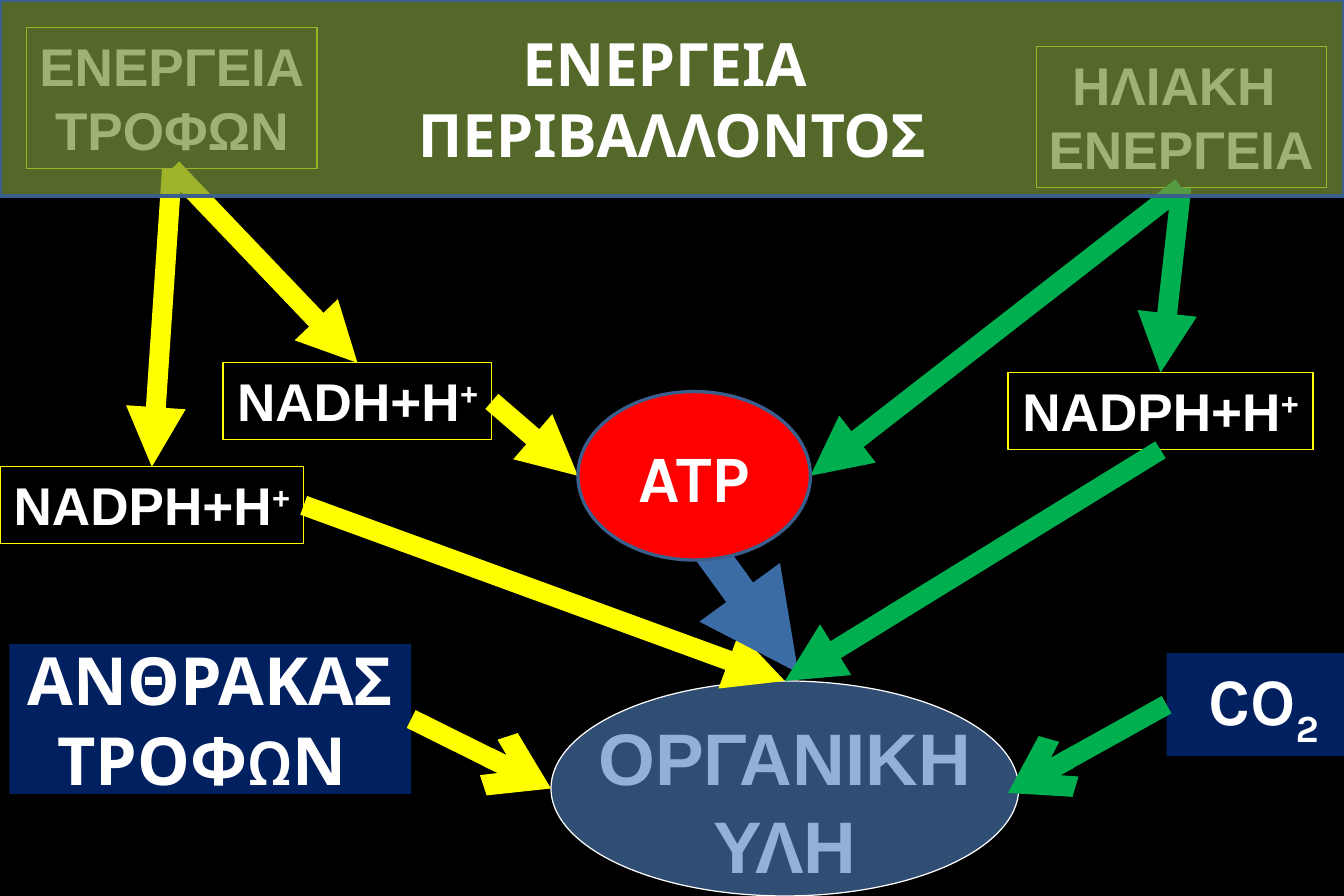
from lxml import etree
from pptx import Presentation
from pptx.dml.color import RGBColor
from pptx.enum.shapes import MSO_CONNECTOR, MSO_SHAPE
from pptx.enum.text import MSO_ANCHOR, MSO_AUTO_SIZE, PP_ALIGN
from pptx.oxml.ns import qn
from pptx.util import Inches, Pt

RECTANGLE, OVAL = MSO_SHAPE.RECTANGLE, MSO_SHAPE.OVAL
STRAIGHT = MSO_CONNECTOR.STRAIGHT
TOP, MIDDLE = MSO_ANCHOR.TOP, MSO_ANCHOR.MIDDLE
GROW = MSO_AUTO_SIZE.SHAPE_TO_FIT_TEXT
CENTER = PP_ALIGN.CENTER

COLORS = {
    "black": "000000", "white": "FFFFFF", "yellow": "FFFF00", "green": "00B050",
    "navy": "002060", "red": "FF0000", "blue": "4F81BD", "edge": "3A5F8C",
    "arrow": "3C6CA6", "olive": "77933C",
}

# Left, top, width and height in percent of the slide
PLACES = {
    "food": (2, 3.1, 21.6, 15.7),
    "sun": (77.1, 5.2, 21.6, 15.7),
    "sun_nadph": (75, 41.6, 22.7, 8.6),
    "nadh": (16.6, 40.5, 20, 8.6),
    "food_nadph": (0, 52.1, 22.6, 8.6),
    "carbon": (0.7, 71.9, 29.9, 16.7),
    "co2": (86.8, 72.9, 13.2, 11.5),
    "atp": (43, 43.7, 17.3, 18.8),
    "organic": (41, 76, 34.8, 24),
    "organic_text": (41.7, 78.9, 33.4, 21.1),
    "environment": (0, 0, 100, 21.9),
}
SIDES = {"top": (0.5, 0), "bottom": (0.5, 1), "left": (0, 0.5), "right": (1, 0.5)}


def color(name):
    return RGBColor.from_string(COLORS[name])


def side(place, name):
    left, top, width, height = PLACES[place]
    across, down = SIDES[name]
    return left + across * width, top + down * height


class EnergySlide:
    def __init__(self, deck):
        self.width, self.height = deck.slide_width, deck.slide_height
        self.page = deck.slides.add_slide(deck.slide_layouts[6])
        self.page.background.fill.solid()
        self.page.background.fill.fore_color.rgb = color("black")

    def point(self, x, y):
        return round(self.width * x / 100), round(self.height * y / 100)

    def frame(self, place):
        left, top, width, height = PLACES[place]
        return *self.point(left, top), *self.point(width, height)

    def set_text(self, box, lines, size, font, anchor=MIDDLE, wrap=True):
        """Fill box with lines, each a list of (text, baseline percent) spans."""
        text = box.text_frame
        text.word_wrap, text.vertical_anchor = wrap, anchor
        if anchor == TOP:
            text.auto_size = GROW
        for number, spans in enumerate(lines):
            para = text.add_paragraph() if number else text.paragraphs[0]
            para.alignment = CENTER
            para.font.name, para.font.size, para.font.bold = font, Pt(size), True
            para.font.color.rgb = color("white")
            for words, baseline in spans:
                span = para.add_run()
                span.text = words
                if baseline:
                    span._r.get_or_add_rPr().set("baseline", str(baseline * 1000))

    def shape(self, place, kind=RECTANGLE, fill=None, line=None, weight=0.75, opacity=100):
        box = self.page.shapes.add_shape(kind, *self.frame(place))
        box.shadow.inherit = False
        if fill:
            box.fill.solid()
            box.fill.fore_color.rgb = color(fill)
            if opacity < 100:
                shade = box._element.spPr.find(qn("a:solidFill"))[0]
                etree.SubElement(shade, qn("a:alpha")).set("val", str(opacity * 1000))
        else:
            box.fill.background()
        if line:
            box.line.color.rgb = color(line)
            box.line.width = Pt(weight)
        else:
            box.line.fill.background()
        return box

    def label(self, place, *lines):
        """Outlined box that fits its text."""
        box = self.shape(place, line="yellow")
        self.set_text(box, lines, 32, "Arial", TOP, wrap=False)

    def caption(self, place, *lines, size=40, **style):
        """Filled shape with centred text."""
        self.set_text(self.shape(place, **style), lines, size, "Karla")

    def text(self, place, *lines):
        box = self.page.shapes.add_textbox(*self.frame(place))
        self.set_text(box, lines, 44, "Arial", TOP)

    def arrow(self, start, end, hue, weight=12, head="triangle"):
        link = self.page.shapes.add_connector(STRAIGHT, *self.point(*start), *self.point(*end))
        link.line.color.rgb = color(hue)
        link.line.width = Pt(weight)
        outline = link._element.spPr.find(qn("a:ln"))
        etree.SubElement(outline, qn("a:tailEnd")).set("type", head)
        etree.SubElement(link._element.spPr, qn("a:effectLst"))


def main():
    deck = Presentation()
    deck.slide_width, deck.slide_height = Inches(11.25), Inches(7.5)
    slide = EnergySlide(deck)
    nadph = [("ΝΑDPH+H", 0), ("+", 30)]

    slide.label("food", [("ΕΝΕΡΓΕΙΑ", 0)], [("ΤΡΟΦΩΝ", 0)])
    slide.label("sun", [("ΗΛΙΑΚΗ ", 0)], [("ΕΝΕΡΓΕΙΑ", 0)])
    slide.label("sun_nadph", nadph)
    slide.caption("carbon", [("ΑΝΘΡΑΚΑΣ ΤΡΟΦΩΝ ", 0)], fill="navy")
    slide.text("organic_text", [("ΟΡΓΑΝΙΚΗ ΥΛΗ", 0)])
    slide.shape("organic", OVAL, "blue", "white", opacity=61)
    slide.label("nadh", [("NADH+H", 0), ("+", 30)])
    slide.label("food_nadph", nadph)

    organic_top = side("organic", "top")
    for start, end, hue in (
        (side("sun", "bottom"), side("sun_nadph", "top"), "green"),
        (side("sun", "bottom"), side("atp", "right"), "green"),
        (side("nadh", "right"), side("atp", "left"), "yellow"),
        (side("food", "bottom"), side("nadh", "top"), "yellow"),
        (side("food_nadph", "right"), organic_top, "yellow"),
    ):
        slide.arrow(start, end, hue)
    slide.arrow((52.8, 61.5), (59.4, 75.1), "arrow", weight=20)
    slide.arrow(side("sun_nadph", "bottom"), organic_top, "green")
    slide.arrow(side("food", "bottom"), side("food_nadph", "top"), "yellow")

    slide.caption("atp", [("ATP", 0)], kind=OVAL, fill="red", line="edge", weight=2)
    slide.caption("co2", [(" CO", 0), ("2", -25)], fill="navy")
    slide.arrow(side("carbon", "right"), side("organic", "left"), "yellow", head="arrow")
    slide.arrow(side("co2", "left"), (75, 88.5), "green", head="arrow")
    slide.caption("environment", [("ΕΝΕΡΓΕΙΑ ", 0)], [("ΠΕΡΙΒΑΛΛΟΝΤΟΣ", 0)],
                  size=36, fill="olive", line="edge", weight=2, opacity=71)
    deck.save("out.pptx")


if __name__ == "__main__":
    main()
